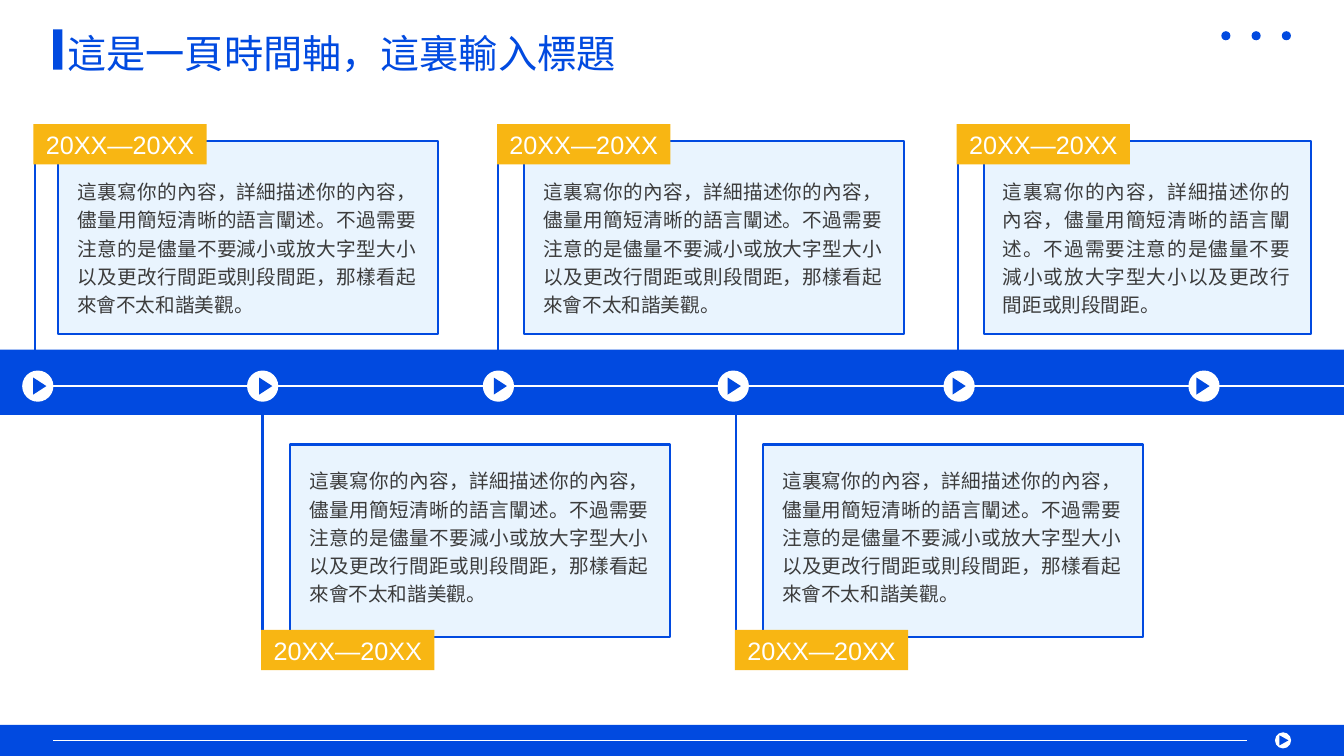
from pptx import Presentation
from pptx.dml.color import RGBColor
from pptx.enum.shapes import MSO_CONNECTOR as CONN, MSO_SHAPE as SHAPE
from pptx.enum.text import MSO_ANCHOR as ANCHOR, MSO_AUTO_SIZE as AUTO, PP_ALIGN as ALIGN
from pptx.oxml.ns import qn
from pptx.util import Pt
from lxml.etree import SubElement

W, H = 960, 540
BLUE, SKY, AMBER, WHITE, INK = "014AE0", "1587FD", "F8B613", "FFFFFF", "3C3C3C"

PERIOD = "20XX—20XX"
ADVICE = ("這裏寫你的內容，詳細描述你的內容，儘量用簡短清晰的語言闡述。"
          "不過需要注意的是儘量不要減小或放大字型大小以及更改行間距或則段間距")
LONG = ADVICE + "，那樣看起來會不太和諧美觀。"
SHORT = ADVICE + "。"

BAND_TOP, BAND_H = 249.8, 46.6
CARD_H = 137.5
UPPER, LOWER = 100.8, 317.5
# card left, card top, card width, tag left, text
CARDS = [
    (41.5, UPPER, 271.4, 23.8, LONG),
    (374.4, UPPER, 271.4, 355, LONG),
    (207.4, LOWER, 271.4, 186.5, LONG),
    (545, LOWER, 271.4, 524.9, LONG),
    (702.7, UPPER, 234, 683.3, SHORT),
]
# button centre, shift of its triangle
BUTTONS = [(27, 1.4), (187.6, 2.2), (356, 1.4), (523.8, 0.7), (685.1, 0), (860, -0.7)]


def rgb(color):
    return RGBColor.from_string(color)


def add_block(s, kind, left, top, width, height, fill):
    sp = s.shapes.add_shape(kind, Pt(left), Pt(top), Pt(width), Pt(height))
    sp.shadow.inherit = False
    sp.fill.solid()
    sp.fill.fore_color.rgb = rgb(fill)
    sp.line.fill.background()
    return sp


def add_line(s, x1, y1, x2, y2, color, weight):
    ln = s.shapes.add_connector(CONN.STRAIGHT, Pt(x1), Pt(y1), Pt(x2), Pt(y2))
    ln.line.color.rgb = rgb(color)
    ln.line.width = Pt(weight)
    SubElement(ln._element.spPr, qn("a:effectLst"))


def set_insets(tf, inset):
    tf.margin_left = tf.margin_right = tf.margin_top = tf.margin_bottom = Pt(inset)


def set_font(p, name, size, color):
    p.font.name = name
    p.font.size = Pt(size)
    p.font.color.rgb = rgb(color)


def add_play_button(s, cx, cy, size, tri_w, tri_h, shift):
    """White disc with a triangle pointing right."""
    add_block(s, SHAPE.OVAL, cx - size / 2, cy - size / 2, size, size, WHITE)
    tri = add_block(s, SHAPE.ISOSCELES_TRIANGLE, cx + shift - tri_w / 2, cy - tri_h / 2,
                    tri_w, tri_h, BLUE)
    tri.rotation = 90


def add_header(s, left, top, width, height):
    # Title with its accent bar
    add_block(s, SHAPE.RECTANGLE, left, top, 6.5, 28.8, BLUE)
    title = s.shapes.title
    title.left, title.top = Pt(left + 3), Pt(top - 3.6)
    title.width, title.height = Pt(413.3), Pt(height)
    tf = title.text_frame
    tf.text = "這是一頁時間軸，這裏輸入標題"
    tf.auto_size = AUTO.NONE
    tf.vertical_anchor = ANCHOR.TOP
    p = tf.paragraphs[0]
    p.alignment = ALIGN.LEFT
    set_font(p, "Karla", 28, BLUE)
    # Three dots at the right edge
    for i in range(3):
        add_block(s, SHAPE.OVAL, left + width - 49.6 + 21.6 * i, top + 1.3, 6.5, 6.5, BLUE)


def add_footer(s, left, top, width, height):
    add_block(s, SHAPE.RECTANGLE, left, top, width, height, BLUE)
    mid = top + height / 2
    add_line(s, left + 38, mid, left + width - 69, mid, WHITE, 1)
    add_play_button(s, left + width - 43.5, mid, 11.5, 7.2, 6.5, 0.6)


def add_band(s, left, top, width, height):
    add_block(s, SHAPE.RECTANGLE, left, top, width, height, BLUE)
    mid = top + 26
    add_line(s, left + 18, mid, left + width, mid, WHITE, 1)
    for cx, shift in BUTTONS:
        add_play_button(s, left + cx, mid, 22.3, 12.2, 9.4, shift)


def add_card(s, left, top, width, height, tag_left, text):
    above = top < BAND_TOP
    tag_top = top - 12.2 if above else top + height - 5
    text_top = top + (18.7 if above else 8.6)
    # Stem joining the tag to the band
    band_edge = BAND_TOP + 2 if above else BAND_TOP + BAND_H - 2
    add_line(s, tag_left + 1, tag_top, tag_left + 1, band_edge, BLUE, 1.5)
    # Tinted frame
    frame = add_block(s, SHAPE.RECTANGLE, left, top, width, height, SKY)
    frame.line.color.rgb = rgb(BLUE)
    frame.line.width = Pt(1.5)
    tint = frame._element.spPr.find(qn("a:solidFill"))[0]
    SubElement(tint, qn("a:alpha"), val="9000")
    # Period tag
    tag = add_block(s, SHAPE.RECTANGLE, tag_left, tag_top, 123.8, 28.8, AMBER)
    tf = tag.text_frame
    set_insets(tf, 7.2)
    tf.vertical_anchor = ANCHOR.MIDDLE
    tf.text = PERIOD
    p = tf.paragraphs[0]
    p.alignment = ALIGN.CENTER
    set_font(p, "Arial", 18, WHITE)
    # Description
    tb = s.shapes.add_textbox(Pt(left + 7.8), Pt(text_top), Pt(width - 17.2), Pt(113))
    tf = tb.text_frame
    tf.word_wrap = True
    tf.auto_size = AUTO.SHAPE_TO_FIT_TEXT
    set_insets(tf, 5.8)
    tf.text = text
    p = tf.paragraphs[0]
    p.alignment = ALIGN.JUSTIFY
    p.line_spacing = 1.2
    set_font(p, "Karla", 14, INK)


def main():
    prs = Presentation()
    prs.slide_width, prs.slide_height = Pt(W), Pt(H)
    s = prs.slides.add_slide(prs.slide_layouts[5])
    add_header(s, 38, 21, W - 76, 59.8)
    add_footer(s, 0, 517.7, W, H - 517.7)
    add_band(s, 0, BAND_TOP, W, BAND_H)
    for left, top, width, tag_left, text in CARDS:
        add_card(s, left, top, width, CARD_H, tag_left, text)
    prs.save("out.pptx")


if __name__ == "__main__":
    main()
